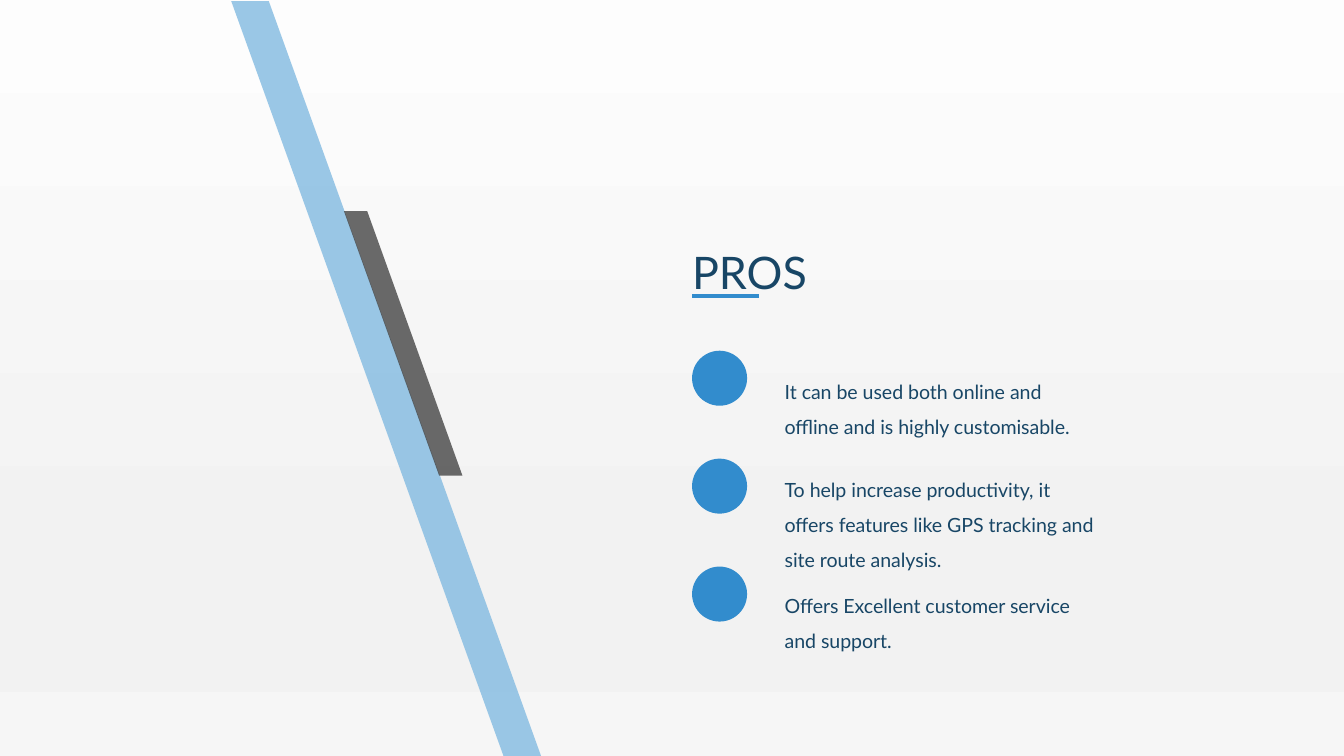
import lxml.etree
import pptx
import pptx.dml.color
import pptx.enum.shapes
import pptx.enum.text
import pptx.oxml.ns
import pptx.util

Cm = pptx.util.Cm
Pt = pptx.util.Pt
qn = pptx.oxml.ns.qn


def color(hex_text):
    return pptx.dml.color.RGBColor.from_string(hex_text)


class Deck:
    FONT = "Lato"
    NAVY = "184666"
    BLUE = "328CCD"
    PALE_BLUE = "82BAE1"
    GREY = "454545"

    def __init__(self, width, height):
        self.prs = pptx.Presentation()
        self.prs.slide_width = Cm(width)
        self.prs.slide_height = Cm(height)
        self.s = self.prs.slides.add_slide(self.prs.slide_layouts[6])

    def background(self, stops):
        """Fill the slide from top to bottom with (percent, colour) stops."""
        fill = self.s.background.fill
        fill.gradient()
        fill.gradient_angle = 270
        gs_lst = next(self.s.background._cSld.iter(qn("a:gsLst")))
        for gs in list(gs_lst):
            gs_lst.remove(gs)
        for percent, hex_text in stops:
            gs = lxml.etree.SubElement(gs_lst, qn("a:gs"), pos=str(percent * 1000))
            lxml.etree.SubElement(gs, qn("a:srgbClr"), val=hex_text)

    def paint(self, sp, hex_text, opacity=100):
        sp.shadow.inherit = False
        sp.fill.solid()
        sp.fill.fore_color.rgb = color(hex_text)
        sp.line.fill.background()
        if opacity < 100:
            clr = next(sp.fill._xPr.iter(qn("a:srgbClr")))
            lxml.etree.SubElement(clr, qn("a:alpha"), val=str(opacity * 1000))

    def band(self, left, top, thickness, shift, bottom, hex_text):
        """Slanted band whose lower edge lies shift to the right."""
        start = (Cm(left), Cm(top))
        corners = [
            (left + thickness, top),
            (left + thickness + shift, bottom),
            (left + shift, bottom),
        ]
        fb = self.s.shapes.build_freeform(*start)
        fb.add_line_segments([(Cm(x), Cm(y)) for x, y in corners], close=True)
        self.paint(fb.convert_to_shape(), hex_text, opacity=80)

    def circle(self, left, top, size):
        sp = self.s.shapes.add_shape(
            pptx.enum.shapes.MSO_SHAPE.OVAL, Cm(left), Cm(top), Cm(size), Cm(size))
        self.paint(sp, self.BLUE)

    def text(self, text, left, top, width, height, size, spacing=1.0):
        sp = self.s.shapes.add_textbox(Cm(left), Cm(top), Cm(width), Cm(height))
        tf = sp.text_frame
        tf.word_wrap = True
        tf.auto_size = pptx.enum.text.MSO_AUTO_SIZE.SHAPE_TO_FIT_TEXT
        tf.margin_left = tf.margin_right = tf.margin_top = tf.margin_bottom = 0
        p = tf.paragraphs[0]
        p.line_spacing = spacing
        r = p.add_run()
        r.text = text
        r.font.name = self.FONT
        r.font.size = Pt(size)
        r.font.color.rgb = color(self.NAVY)

    def rule(self, left, y, length):
        ln = self.s.shapes.add_connector(
            pptx.enum.shapes.MSO_CONNECTOR.STRAIGHT,
            Cm(left), Cm(y), Cm(left + length), Cm(y))
        ln.line.color.rgb = color(self.BLUE)
        ln.line.width = Pt(2.25)
        lxml.etree.SubElement(ln._element.spPr, qn("a:effectLst"))


def main():
    deck = Deck(25.4, 14.29)
    deck.background([(0, "FDFDFD"), (74, "F2F2F2"), (83, "F2F2F2"), (100, "F6F6F6")])

    # Slanted bands
    deck.band(4.37, 0.02, 0.71, 5.15, 14.3, deck.PALE_BLUE)
    deck.band(6.5, 3.99, 0.44, 1.8, 8.99, deck.GREY)

    # Heading
    left = 13.08
    deck.text("PROS", left, 4.62, 2.54, 1.02, 24)
    deck.rule(left, 5.59, 1.27)

    # Points: text, top and height of each
    points = [
        ("It can be used both online and offline and is highly customisable.", 6.96, 1.27),
        ("To help increase productivity, it offers features like GPS tracking "
         "and site route analysis.", 8.81, 1.93),
        ("Offers Excellent customer service and support.", 11.0, 1.27),
    ]
    for i, (text, top, height) in enumerate(points):
        deck.circle(left, 6.63 + i * 2.04, 1.04)
        deck.text(text, 14.83, top, 5.87, height, 10.5, spacing=1.5)

    deck.prs.save("out.pptx")


if __name__ == "__main__":
    main()
